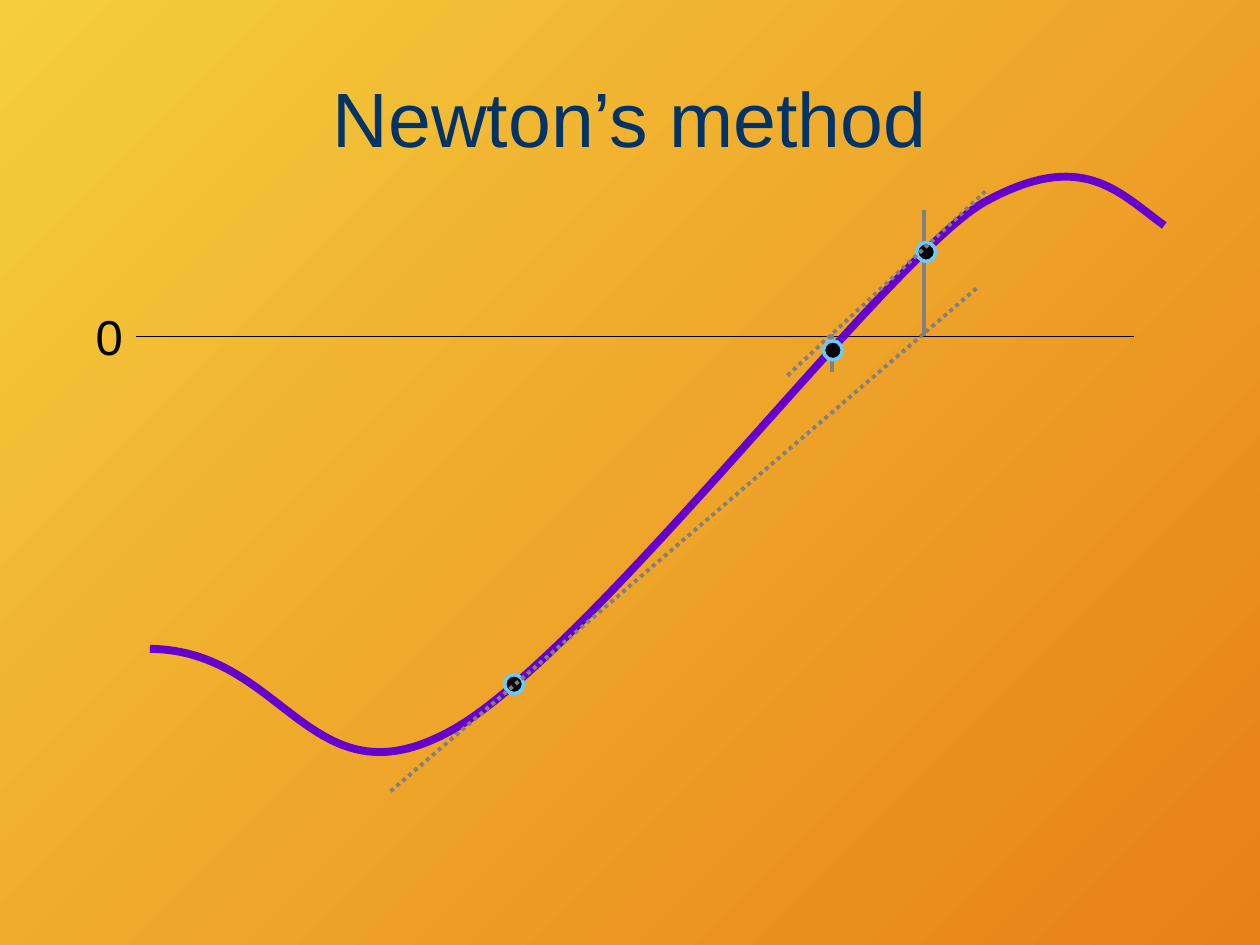
import collections

import pptx
import pptx.dml.color
import pptx.enum.dml
import pptx.enum.shapes
import pptx.enum.text
import pptx.oxml
import pptx.oxml.ns
import pptx.util

Inches = pptx.util.Inches
Box = collections.namedtuple("Box", "left top width height")

COLORS = {
    "sky": "F5CE3D",
    "ember": "E88018",
    "title": "003366",
    "ink": "000000",
    "curve": "6600CC",
    "ring": "66CCFF",
    "guide": "808080",
}
FONT = "Arial"
DOT_SIZE = 0.15
SAMPLES = 40

CURVE_START = (0.53, 3.75)
CURVE_SEGMENTS = [
    [(1.6, 3.76), (1.8, 5.0), (2.9, 4.41)],
    [(4.01, 3.82), (6.4, 0.62), (7.16, 0.2)],
    [(7.93, -0.22), (8.21, 0.12), (8.58, 0.39)],
]
ITERATIONS = [
    {
        "dot": (3.42, 4.03),
        "tangent": [(2.44, 4.88), (7.1, 0.88)],
        "upright": [(6.67, 1.27), (6.67, 0.27)],
    },
    {
        "dot": (6.69, 0.6),
        "tangent": [(5.59, 1.58), (7.16, 0.12)],
        "upright": [(5.94, 1.55), (5.94, 1.25)],
    },
]
FINAL_DOT = (5.95, 1.38)


def color(name):
    return pptx.dml.color.RGBColor.from_string(COLORS[name])


def place(box, point):
    return Inches(box.left + point[0]), Inches(box.top + point[1])


def style_line(shape, name, width):
    shape.line.color.rgb = color(name)
    shape.line.width = pptx.util.Pt(width)


def add_text(shapes, box, text, size, name, align, wrap):
    label = shapes.add_textbox(*(Inches(side) for side in box))
    frame = label.text_frame
    frame.word_wrap = wrap
    para = frame.paragraphs[0]
    para.alignment = align
    span = para.add_run()
    span.text = text
    span.font.name = FONT
    span.font.size = pptx.util.Pt(size)
    span.font.color.rgb = color(name)
    return label


def add_line(shapes, box, ends, name, width, dash=None):
    line = shapes.add_connector(
        pptx.enum.shapes.MSO_CONNECTOR.STRAIGHT,
        *place(box, ends[0]), *place(box, ends[1]))
    style_line(line, name, width)
    if dash:
        line.line.dash_style = dash
    properties = line._element.spPr
    properties.append(properties.makeelement(pptx.oxml.ns.qn("a:effectLst"), {}))
    return line


def add_dot(shapes, box, center):
    corner = [value - DOT_SIZE / 2 for value in center]
    dot = shapes.add_shape(
        pptx.enum.shapes.MSO_SHAPE.OVAL, *place(box, corner),
        Inches(DOT_SIZE), Inches(DOT_SIZE))
    dot.shadow.inherit = False
    dot.fill.solid()
    dot.fill.fore_color.rgb = color("ink")
    style_line(dot, "ring", 2)


def bezier_point(points, t):
    weights = ((1 - t) ** 3, 3 * t * (1 - t) ** 2, 3 * t ** 2 * (1 - t), t ** 3)
    return tuple(sum(weight * point[axis] for weight, point in zip(weights, points))
                 for axis in (0, 1))


def add_curve(shapes, box):
    samples = []
    start = CURVE_START
    for segment in CURVE_SEGMENTS:
        samples += [place(box, bezier_point([start] + segment, step / SAMPLES))
                    for step in range(1, SAMPLES + 1)]
        start = segment[-1]
    builder = shapes.build_freeform(*place(box, CURVE_START))
    builder.add_line_segments(samples, close=False)
    curve = builder.convert_to_shape()
    curve.shadow.inherit = False
    curve.fill.background()
    style_line(curve, "curve", 4.5)

    qn = pptx.oxml.ns.qn
    outline = curve._element.spPr.find(".//" + qn("a:path"))
    for straight in outline.findall(qn("a:lnTo")):
        outline.remove(straight)
    for segment in CURVE_SEGMENTS:
        bend = outline.makeelement(qn("a:cubicBezTo"), {})
        outline.append(bend)
        for point in segment:
            x, y = place(box, point)
            bend.append(bend.makeelement(
                qn("a:pt"), {"x": str(x - curve.left), "y": str(y - curve.top)}))


def add_title(slide, box):
    title = add_text(slide.shapes, box, "Newton’s method", 44, "title",
                     pptx.enum.text.PP_ALIGN.CENTER, True)
    title.text_frame.vertical_anchor = pptx.enum.text.MSO_ANCHOR.MIDDLE


def add_function_plot(slide, box):
    shapes = slide.shapes.add_group_shape().shapes
    axis = add_line(shapes, box, [(0.42, 1.27), (8.34, 1.27)], "ink", 0.75)
    zero = add_text(shapes, Box(box.left, box.top + 0.98, 0.42, 0.58), "0", 28, "ink",
                    pptx.enum.text.PP_ALIGN.LEFT, False)
    zero.text_frame.auto_size = pptx.enum.text.MSO_AUTO_SIZE.SHAPE_TO_FIT_TEXT
    axis.begin_connect(zero, 3)
    add_curve(shapes, box)


def add_iterations(slide, box):
    dotted = pptx.enum.dml.MSO_LINE.ROUND_DOT
    first, second = ITERATIONS
    add_dot(slide.shapes, box, first["dot"])
    add_line(slide.shapes, box, first["tangent"], "guide", 2.25, dotted)
    add_line(slide.shapes, box, first["upright"], "guide", 2.25)
    add_dot(slide.shapes, box, second["dot"])
    add_line(slide.shapes, box, second["tangent"], "guide", 2.25, dotted)
    add_line(slide.shapes, box, second["upright"], "guide", 2.25)
    add_dot(slide.shapes, box, FINAL_DOT)


def paint_background(slide):
    fill = slide.background.fill
    fill.gradient()
    fill.gradient_angle = 315
    for stop, name, position in zip(fill.gradient_stops, ("sky", "ember"), (0, 1)):
        stop.color.rgb = color(name)
        stop.position = position


def main():
    deck = pptx.Presentation()
    deck.slide_width = Inches(10)
    deck.slide_height = Inches(7.5)
    page = deck.slides.add_slide(deck.slide_layouts[6])
    plot = Box(0.66, 1.4, 8.58, 4.88)
    paint_background(page)
    add_title(page, Box(0.5, 0.3, 9, 1.25))
    add_function_plot(page, plot)
    add_iterations(page, plot)
    deck.save("out.pptx")


if __name__ == "__main__":
    main()
